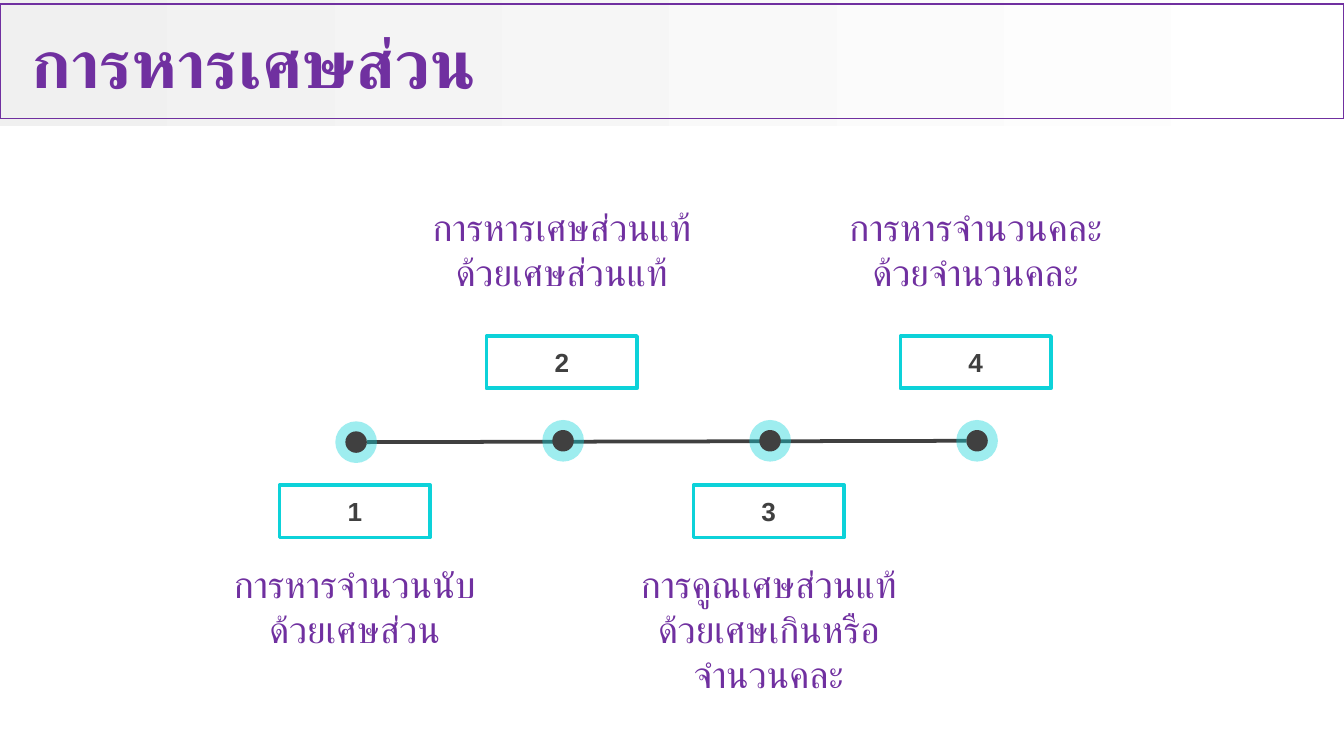
from dataclasses import dataclass

from lxml.etree import SubElement
from pptx import Presentation
from pptx.dml.color import RGBColor
from pptx.enum.shapes import MSO_CONNECTOR, MSO_SHAPE
from pptx.enum.text import MSO_ANCHOR, MSO_AUTO_SIZE, PP_ALIGN
from pptx.oxml.ns import qn
from pptx.util import Inches, Pt


@dataclass(frozen=True)
class Theme:
    """Colours, fonts and type sizes of the slide."""

    purple: RGBColor = RGBColor(0x70, 0x30, 0xA0)
    cyan: RGBColor = RGBColor(0x0D, 0xD2, 0xD9)
    dark: RGBColor = RGBColor(0x40, 0x40, 0x40)
    band_start: RGBColor = RGBColor(0xF0, 0xF0, 0xF0)
    band_end: RGBColor = RGBColor(0xFF, 0xFF, 0xFF)
    text_font: str = "Calibri"
    number_font: str = "Arial"
    title_size: int = 36
    label_size: int = 20
    number_size: int = 14


def write_text(box, paragraphs, *, font, size, color, bold=False,
               align=PP_ALIGN.CENTER, anchor=MSO_ANCHOR.TOP):
    """Fill a box with paragraphs in one format."""
    frame = box.text_frame
    frame.word_wrap = True
    frame.vertical_anchor = anchor
    for index, text in enumerate(paragraphs):
        para = frame.add_paragraph() if index else frame.paragraphs[0]
        para.text = text
        para.alignment = align
        for span in para.runs:
            span.font.name = font
            span.font.size = Pt(size)
            span.font.bold = bold
            span.font.color.rgb = color


class TimelineSlide:
    """Draws the elements of a timeline on one page."""

    def __init__(self, page, theme):
        """Keep the page and its theme."""
        self.page = page
        self.theme = theme

    def outline(self, left, top, width, height, color, weight):
        """Add an unfilled rectangle with a coloured border."""
        box = self.page.shapes.add_shape(
            MSO_SHAPE.RECTANGLE, Inches(left), Inches(top), Inches(width), Inches(height))
        box.shadow.inherit = False
        box.fill.background()
        box.line.color.rgb = color
        box.line.width = Pt(weight)
        return box

    def band(self, width, height):
        """Add the gradient band at the top of the page."""
        box = self.page.shapes.add_shape(
            MSO_SHAPE.RECTANGLE, 0, 0, Inches(width), Inches(height))
        box.shadow.inherit = False
        box.line.fill.background()
        box.fill.gradient()
        box.fill.gradient_angle = 0
        colors = (self.theme.band_start, self.theme.band_end)
        for stop, color in zip(box.fill.gradient_stops, colors):
            stop.color.rgb = color

    def title(self, text):
        """Add the framed title."""
        theme = self.theme
        box = self.outline(0, 0.03, 10, 0.85, theme.purple, 0.75)
        write_text(box, [text], font=theme.text_font, size=theme.title_size, color=theme.purple,
                   bold=True, align=PP_ALIGN.LEFT, anchor=MSO_ANCHOR.MIDDLE)

    def axis(self, start, end):
        """Add the line that carries the markers."""
        line = self.page.shapes.add_connector(
            MSO_CONNECTOR.STRAIGHT, *(Inches(value) for value in (*start, *end)))
        line.line.color.rgb = self.theme.dark
        line.line.width = Pt(2)
        SubElement(line.element.spPr, qn("a:effectLst"))

    def marker(self, center, middle):
        """Add a dot inside a translucent halo."""
        group = self.page.shapes.add_group_shape()
        for size, color, opacity in ((0.31, self.theme.cyan, 40), (0.16, self.theme.dark, 100)):
            disc = group.shapes.add_shape(
                MSO_SHAPE.OVAL, Inches(center - size / 2), Inches(middle - size / 2),
                Inches(size), Inches(size))
            disc.shadow.inherit = False
            disc.line.fill.background()
            disc.fill.solid()
            disc.fill.fore_color.rgb = color
            if opacity < 100:
                tint = disc.element.spPr.find(f"{qn('a:solidFill')}/{qn('a:srgbClr')}")
                SubElement(tint, qn("a:alpha"), val=str(opacity * 1000))

    def badge(self, center, top, number):
        """Add a numbered box."""
        theme = self.theme
        box = self.outline(center - 0.56, top, 1.12, 0.39, theme.cyan, 2)
        write_text(box, [str(number)], font=theme.number_font, size=theme.number_size,
                   color=theme.dark, bold=True, anchor=MSO_ANCHOR.MIDDLE)

    def label(self, center, top, paragraphs):
        """Add the topic of a step."""
        theme = self.theme
        width = 2.25
        box = self.page.shapes.add_textbox(
            Inches(center - width / 2), Inches(top), Inches(width), Inches(0.77))
        write_text(box, paragraphs, font=theme.text_font, size=theme.label_size,
                   color=theme.purple)
        box.text_frame.auto_size = MSO_AUTO_SIZE.SHAPE_TO_FIT_TEXT


def main():
    """Build and save the deck."""
    deck = Presentation()
    deck.slide_width = Inches(10)
    deck.slide_height = deck.slide_width * 9 // 16
    slide = TimelineSlide(deck.slides.add_slide(deck.slide_layouts[6]), Theme())
    topics = (
        ["การหารจำนวนนับ", "ด้วยเศษส่วน"],
        ["การหารเศษส่วนแท้\vด้วยเศษส่วนแท้"],
        ["การคูณเศษส่วนแท้", "ด้วยเศษเกินหรือจำนวนคละ"],
        ["การหารจำนวนคละ\vด้วยจำนวนคละ"],
    )
    first_marker, first_step, pitch = 2.65, 2.64, 1.54

    slide.band(9.96, 0.94)
    slide.title(" การหารเศษส่วน")
    slide.axis((2.73, 3.29), (7.19, 3.28))
    for index, paragraphs in enumerate(topics):
        offset = index * pitch
        badge_top, label_top = (2.5, 1.47) if index % 2 else (3.61, 4.13)
        slide.marker(first_marker + offset, 3.28 if index else 3.29)
        slide.badge(first_step + offset, badge_top, index + 1)
        slide.label(first_step + offset, label_top, paragraphs)
    deck.save("out.pptx")


if __name__ == "__main__":
    main()
